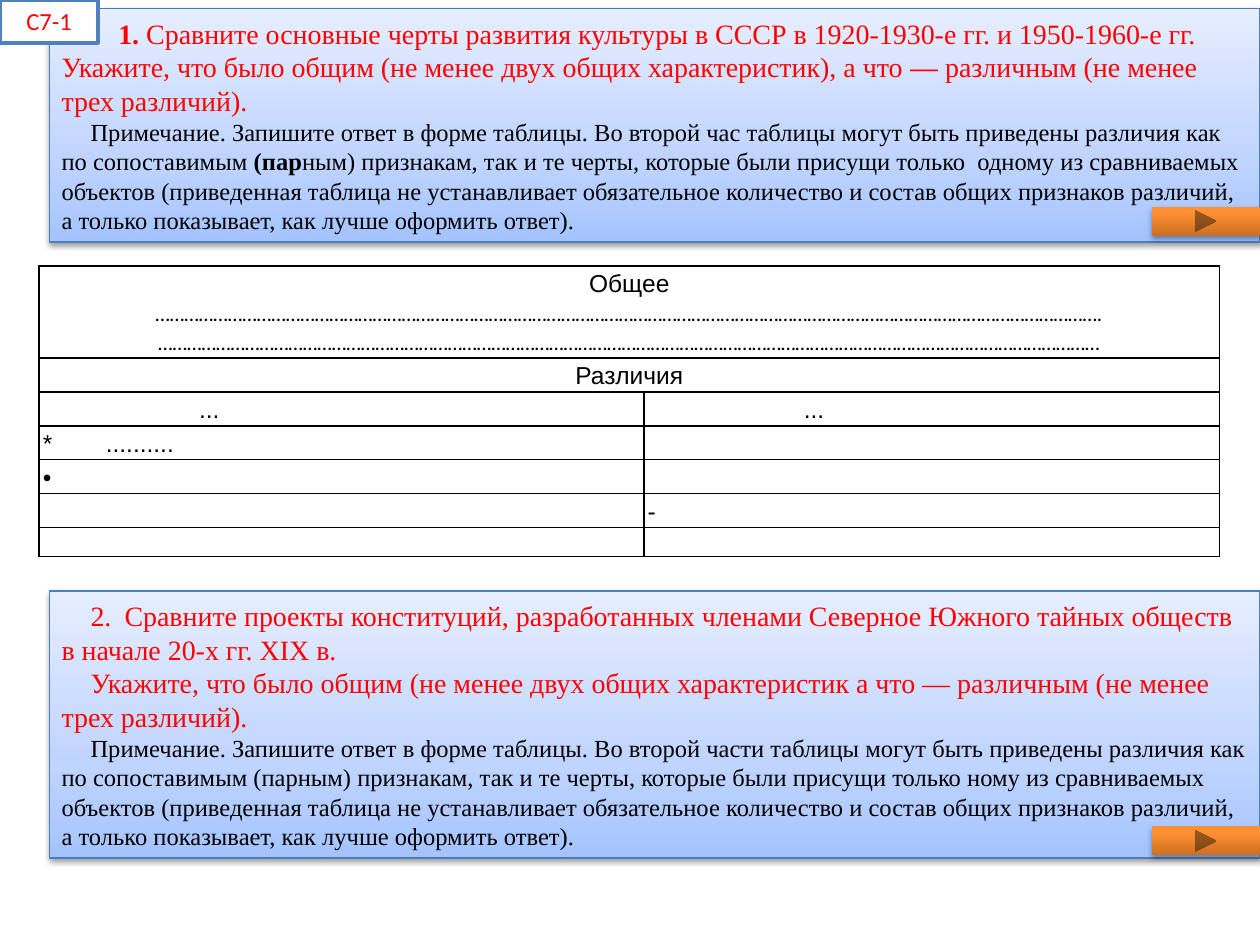
from dataclasses import dataclass

from lxml import etree
from pptx import Presentation, util as u
from pptx.dml.color import RGBColor
from pptx.enum import shapes, text
from pptx.oxml.ns import qn


@dataclass(frozen=True)
class Theme:
    serif: str = "Times New Roman"
    dash: str = "TeX Gyre Schola"
    sans: str = "Arial"
    label: str = "Calibri"
    red: str = "FF0000"
    black: str = "000000"
    white: str = "FFFFFF"
    panel_line: str = "4B7EBC"
    label_line: str = "4F81BD"
    panel_stops: tuple = ((0, "A4C4FF"), (35, "BFD4FF"), (100, "E6EEFF"))
    button_stops: tuple = ((0, "CC6E20"), (80, "FF9034"), (100, "FF9136"))
    task: int = 16
    body: int = 14
    dots: int = 12


T = Theme()
INDENT = 0.23
CELL_PAD = 0.03


def rgb(value):
    return RGBColor.from_string(value)


def child(parent, tag, **attrs):
    return etree.SubElement(parent, qn(tag), {k: str(v) for k, v in attrs.items()})


def add_box(s, kind, box):
    sp = s.shapes.add_shape(kind, *(u.Inches(v) for v in box))
    sp.shadow.inherit = False
    return sp


def set_line(sp, color, width):
    sp.line.color.rgb = rgb(color)
    sp.line.width = u.Pt(width)


def shade(sp, stops, alpha, distance):
    """Give a shape a bottom-to-top gradient and a soft shadow below it."""
    sp.fill.gradient()
    sp.fill.gradient_angle = 90
    pr = sp._element.spPr
    gs_list = pr.find(".//" + qn("a:gsLst"))
    gs_list.clear()
    for pos, color in stops:
        child(child(gs_list, "a:gs", pos=pos * 1000), "a:srgbClr", val=color)
    shadow = child(pr.find(qn("a:effectLst")), "a:outerShdw", blurRad=u.Pt(3.1),
                   dist=u.Pt(distance), dir=90 * 60000, rotWithShape=0)
    child(child(shadow, "a:srgbClr", val=T.black), "a:alpha", val=alpha * 1000)


def write(p, runs, font, size, color, align=text.PP_ALIGN.LEFT, indent=0, left=0, tab=None):
    """Fill a paragraph; each run is a text or (text, {font attribute: value})."""
    p.alignment = align
    p.font.name, p.font.size, p.font.color.rgb = font, u.Pt(size), rgb(color)
    pr = p._p.get_or_add_pPr()
    pr.set("marL", str(u.Inches(left)))
    pr.set("indent", str(u.Inches(indent)))
    if tab:
        tabs = etree.Element(qn("a:tabLst"))
        child(tabs, "a:tab", pos=u.Inches(tab), algn="l")
        pr.find(qn("a:defRPr")).addprevious(tabs)
    for run in runs:
        words, extra = (run, {}) if isinstance(run, str) else run
        r = p.add_run()
        r.text = words
        for name, value in extra.items():
            setattr(r.font, name, value)


def add_button(s, box):
    sp = add_box(s, shapes.MSO_SHAPE.ACTION_BUTTON_FORWARD_OR_NEXT, box)
    sp.line.fill.background()
    shade(sp, T.button_stops, alpha=35, distance=1.8)


def add_panel(s, box, paragraphs):
    sp = add_box(s, shapes.MSO_SHAPE.RECTANGLE, box)
    set_line(sp, T.panel_line, 0.75)
    shade(sp, T.panel_stops, alpha=38, distance=1.6)
    tf = sp.text_frame
    tf.word_wrap = True
    tf.vertical_anchor = text.MSO_ANCHOR.MIDDLE
    for i, (runs, size, color, layout) in enumerate(paragraphs):
        p = tf.add_paragraph() if i else tf.paragraphs[0]
        write(p, runs, T.serif, size, color, **{"indent": INDENT, **layout})


def add_label(s, box, words):
    sp = add_box(s, shapes.MSO_SHAPE.RECTANGLE, box)
    sp.fill.solid()
    sp.fill.fore_color.rgb = rgb(T.white)
    set_line(sp, T.label_line, 2)
    sp.text_frame.vertical_anchor = text.MSO_ANCHOR.TOP
    write(sp.text_frame.paragraphs[0], [words], T.label, T.body, T.red,
          text.PP_ALIGN.CENTER)


def format_cell(cell):
    cell.fill.background()
    cell.margin_left = cell.margin_right = u.Inches(CELL_PAD)
    cell.margin_top = cell.margin_bottom = 0
    pr = cell._tc.get_or_add_tcPr()
    for i, side in enumerate("LRTB"):
        ln = etree.Element(qn("a:ln" + side), w=str(u.Pt(1)))
        child(child(ln, "a:solidFill"), "a:srgbClr", val=T.black)
        pr.insert(i, ln)


def add_answer_table(s, box, columns, rows, contents):
    """contents maps (row, column) to a list of (text, font, size, layout)."""
    tb = s.shapes.add_table(len(rows), len(columns), *(u.Inches(v) for v in box)).table
    tb.first_row = tb.horz_banding = False
    for column, width in zip(tb.columns, columns):
        column.width = u.Inches(width)
    for row, height in zip(tb.rows, rows):
        row.height = u.Inches(height)
    for r in range(len(rows)):
        for c in range(len(columns)):
            cell = tb.cell(r, c)
            format_cell(cell)
            lines = contents.get((r, c), [("", T.sans, T.dots, {})])
            for i, (words, font, size, layout) in enumerate(lines):
                p = cell.text_frame.add_paragraph() if i else cell.text_frame.paragraphs[0]
                p.line_spacing = 1.15
                write(p, [words] if words else [], font, size, T.black, **layout)
    for r in (0, 1):
        tb.cell(r, 0).merge(tb.cell(r, 1))


def main():
    prs = Presentation()
    prs.slide_width, prs.slide_height = u.Inches(10), u.Inches(7.5)
    s = prs.slides.add_slide(prs.slide_layouts[6])

    bold = {"bold": True}
    add_panel(s, (0.39, 0.07, 9.61, 1.85), [
        ([("1. ", bold),
          "Сравните основные черты развития культуры в СССР в 1920-1930-е гг. и "
          "1950-1960-е гг. Укажите, что было общим (не менее двух общих "
          "характеристик), а что ", ("—", {"name": T.dash}),
          " различным (не менее трех различий)."], T.task, T.red, {"indent": 0.45}),
        (["Примечание. Запишите ответ в форме таблицы. Во второй час таблицы могут быть "
          "приведены различия как по сопоставимым ", ("(пар", bold),
          "ным) признакам, так и те черты, которые были присущи только  одному из "
          "сравниваемых объектов (приведенная таблица не устанавливает обязательное "
          "количество и состав общих признаков различий, а только показывает, как лучше "
          "оформить ответ)."], T.body, T.black, {}),
    ])
    add_label(s, (0, 0, 0.78, 0.34), "C7-1")

    center, inset = {"align": text.PP_ALIGN.CENTER}, {"left": 1.24}
    dots = "…" * 65
    add_answer_table(s, (0.31, 2.11, 9.37, 2.31), (4.8, 4.57), [0.73] + [0.27] * 5 + [0.23], {
        (0, 0): [("Общее", T.sans, T.body, center),
                 (dots + ".", T.label, T.dots, center),
                 (dots, T.label, T.dots, center)],
        (1, 0): [("Различия", T.sans, T.body, center)],
        (2, 0): [("...", T.sans, T.body, inset)],
        (2, 1): [("...", T.sans, T.body, inset)],
        (3, 0): [("*\t..........", T.sans, T.body, {"tab": 0.29})],
        (4, 0): [("•", T.sans, T.body, {})],
        (5, 1): [("-", T.sans, T.body, {})],
    })

    add_panel(s, (0.39, 4.69, 9.61, 2.12), [
        (["2.\tСравните проекты конституций, разработанных членами Северное Южного "
          "тайных обществ в начале 20-х гг. XIX в."], T.task, T.red, {"tab": 0.56}),
        (["Укажите, что было общим (не менее двух общих характеристик а что — различным "
          "(не менее трех различий)."], T.task, T.red, {}),
        (["Примечание. Запишите ответ в форме таблицы. Во второй части таблицы могут быть "
          "приведены различия как по сопоставимым (парным) признакам, так и те черты, "
          "которые были присущи только ному из сравниваемых объектов (приведенная таблица "
          "не устанавливает обязательное количество и состав общих признаков различий, а "
          "только показывает, как лучше оформить ответ)."], T.body, T.black, {}),
    ])
    for top in (1.64, 6.56):
        add_button(s, (9.14, top, 0.86, 0.23))
    prs.save("out.pptx")


if __name__ == "__main__":
    main()
